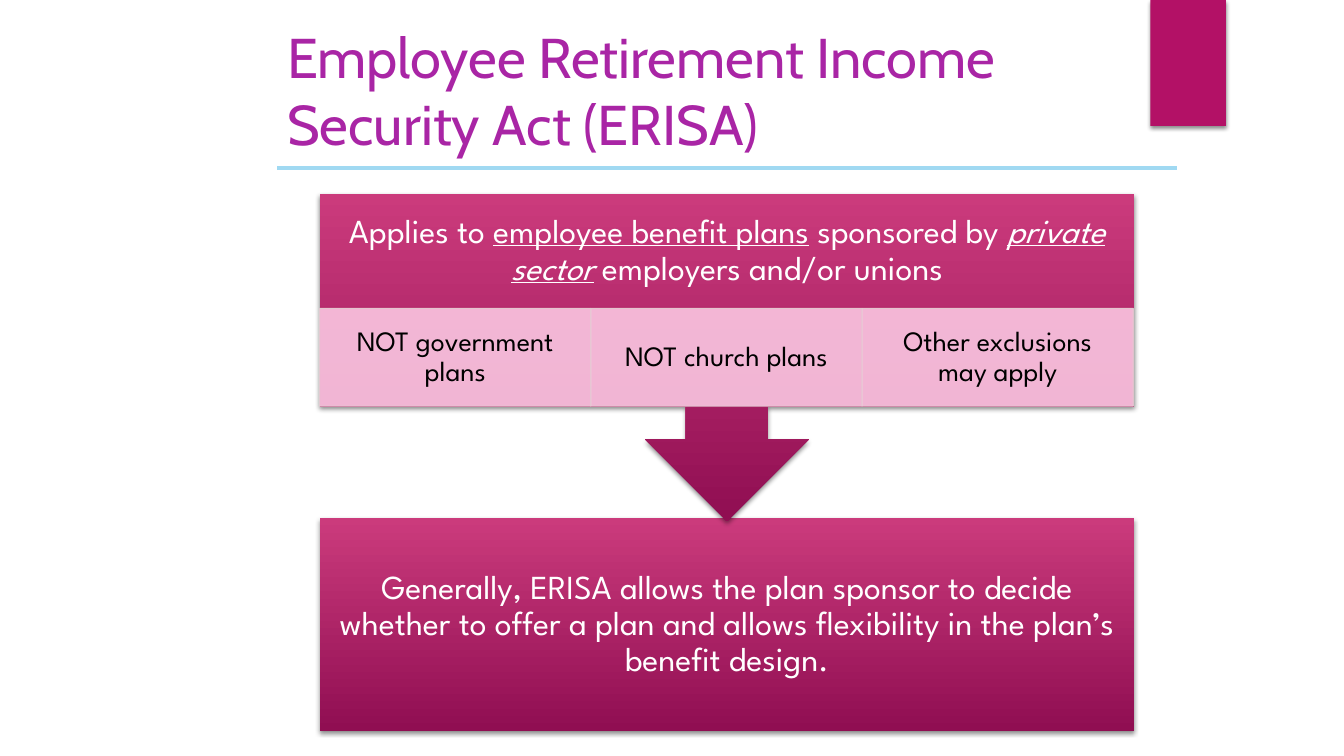
from lxml import etree
from pptx import Presentation
from pptx.dml.color import RGBColor
from pptx.enum.shapes import MSO_CONNECTOR, MSO_SHAPE
from pptx.enum.text import MSO_ANCHOR, PP_ALIGN
from pptx.oxml.ns import qn
from pptx.util import Emu, Pt

PX = 9144  # 100 px to the inch
RECT, CALLOUT = MSO_SHAPE.RECTANGLE, MSO_SHAPE.DOWN_ARROW_CALLOUT
STRAIGHT = MSO_CONNECTOR.STRAIGHT
TOP, MIDDLE = MSO_ANCHOR.TOP, MSO_ANCHOR.MIDDLE
LEFT, CENTER = PP_ALIGN.LEFT, PP_ALIGN.CENTER
TITLE_FONT, BODY_FONT = "Cabin", "League Spartan"
COLORS = {
    "title": "A925A5", "rule": "A0D9F2", "tab": "B31166",
    "light": "CB3B7C", "dark": "900E52",
    "tile": "FAC6E1", "tile_line": "E5CCD3",
    "white": "FFFFFF", "black": "000000",
}
BLOCK_X, BLOCK_W = 317, 808
HEADER_Y, HEADER_H = 192, 114
TILE_Y, TILE_H = 306, 97
EXCLUSIONS = ["NOT government plans", "NOT church plans", "Other exclusions may apply"]


def px(*lengths):
    return [Emu(length * PX) for length in lengths]


def color(name):
    return RGBColor.from_string(COLORS[name])


def add_effects(shape):
    return etree.SubElement(shape._element.spPr, qn("a:effectLst"))


def add_shadow(shape):
    shadow = etree.SubElement(add_effects(shape), qn("a:outerShdw"), blurRad=str(Pt(3)),
                              dist=str(Pt(2)), dir="5400000", rotWithShape="0")
    black = etree.SubElement(shadow, qn("a:srgbClr"), val=COLORS["black"])
    etree.SubElement(black, qn("a:alpha"), val="45000")


def make_translucent(shape):
    """Set fill and line to 90 % opacity."""
    for color_node in shape._element.spPr.iter(qn("a:srgbClr")):
        etree.SubElement(color_node, qn("a:alpha"), val="90000")


def add_block(page, kind, bounds, fill=None):
    """Add a shadowed shape; without a fill it gets the vertical gradient."""
    shape = page.shapes.add_shape(kind, *px(*bounds))
    shape.line.fill.background()
    if fill:
        shape.fill.solid()
        shape.fill.fore_color.rgb = color(fill)
    else:
        shape.fill.gradient()
        shape.fill.gradient_angle = 270
        for stop, name in zip(shape.fill.gradient_stops, ("light", "dark")):
            stop.color.rgb = color(name)
    add_shadow(shape)
    return shape


def write(box, spans, font, size, fill, align=CENTER, anchor=MIDDLE, insets=(19, 19), spacing=0.9):
    """Fill a box with one paragraph of (text, underline, italic) spans."""
    frame = box.text_frame
    frame.word_wrap = True
    frame.vertical_anchor = anchor
    frame.margin_left = frame.margin_right = px(insets[0])[0]
    frame.margin_top = frame.margin_bottom = px(insets[1])[0]
    para = frame.paragraphs[0]
    para.alignment = align
    para.line_spacing = spacing
    for text, underline, italic in spans:
        span = para.add_run()
        span.text = text
        span.font.name = font
        span.font.size = Pt(size)
        span.font.color.rgb = color(fill)
        span.font.underline = underline
        span.font.italic = italic


def add_title(page, text):
    box = page.shapes.add_textbox(*px(275, 17, 892, 92))
    write(box, [(text, False, False)], TITLE_FONT, 40, "title", LEFT, TOP, (10, 5), 1.0)


def add_rule(page):
    rule = page.shapes.add_connector(STRAIGHT, *px(275, 167, 1167, 167))
    rule.line.color.rgb = color("rule")
    rule.line.width = Pt(3)
    add_effects(rule)


def add_tile(page, bounds, text):
    tile = page.shapes.add_shape(RECT, *px(*bounds))
    tile.shadow.inherit = False
    tile.fill.solid()
    tile.fill.fore_color.rgb = color("tile")
    tile.line.color.rgb = color("tile_line")
    tile.line.width = Pt(0.75)
    make_translucent(tile)
    write(tile, [(text, False, False)], BODY_FONT, 20, "black", insets=(16, 3))


def main():
    deck = Presentation()
    deck.slide_width, deck.slide_height = px(1333, 750)
    page = deck.slides.add_slide(deck.slide_layouts[6])

    add_block(page, RECT, (1141, 0, 75, 125), "tab")
    add_title(page, "Employee Retirement Income Security Act (ERISA)")
    add_rule(page)

    conclusion = add_block(page, RECT, (BLOCK_X, 514, BLOCK_W, 211))
    write(conclusion, [("Generally, ERISA allows the plan sponsor to decide whether to offer a plan "
                        "and allows flexibility in the plan’s benefit design.", False, False)],
          BODY_FONT, 24, "white")

    add_block(page, CALLOUT, (BLOCK_X, HEADER_Y, BLOCK_W, 325))
    header = page.shapes.add_textbox(*px(BLOCK_X, HEADER_Y, BLOCK_W, HEADER_H))
    write(header, [
        ("Applies to ", False, False),
        ("employee benefit plans", True, False),
        (" sponsored by ", False, False),
        ("private sector", True, True),
        (" employers and/or unions", False, False),
    ], BODY_FONT, 24, "white")

    tile_w = BLOCK_W // len(EXCLUSIONS)
    for column, text in enumerate(EXCLUSIONS):
        add_tile(page, (BLOCK_X + column * tile_w, TILE_Y, tile_w, TILE_H), text)

    deck.save("out.pptx")


if __name__ == "__main__":
    main()
